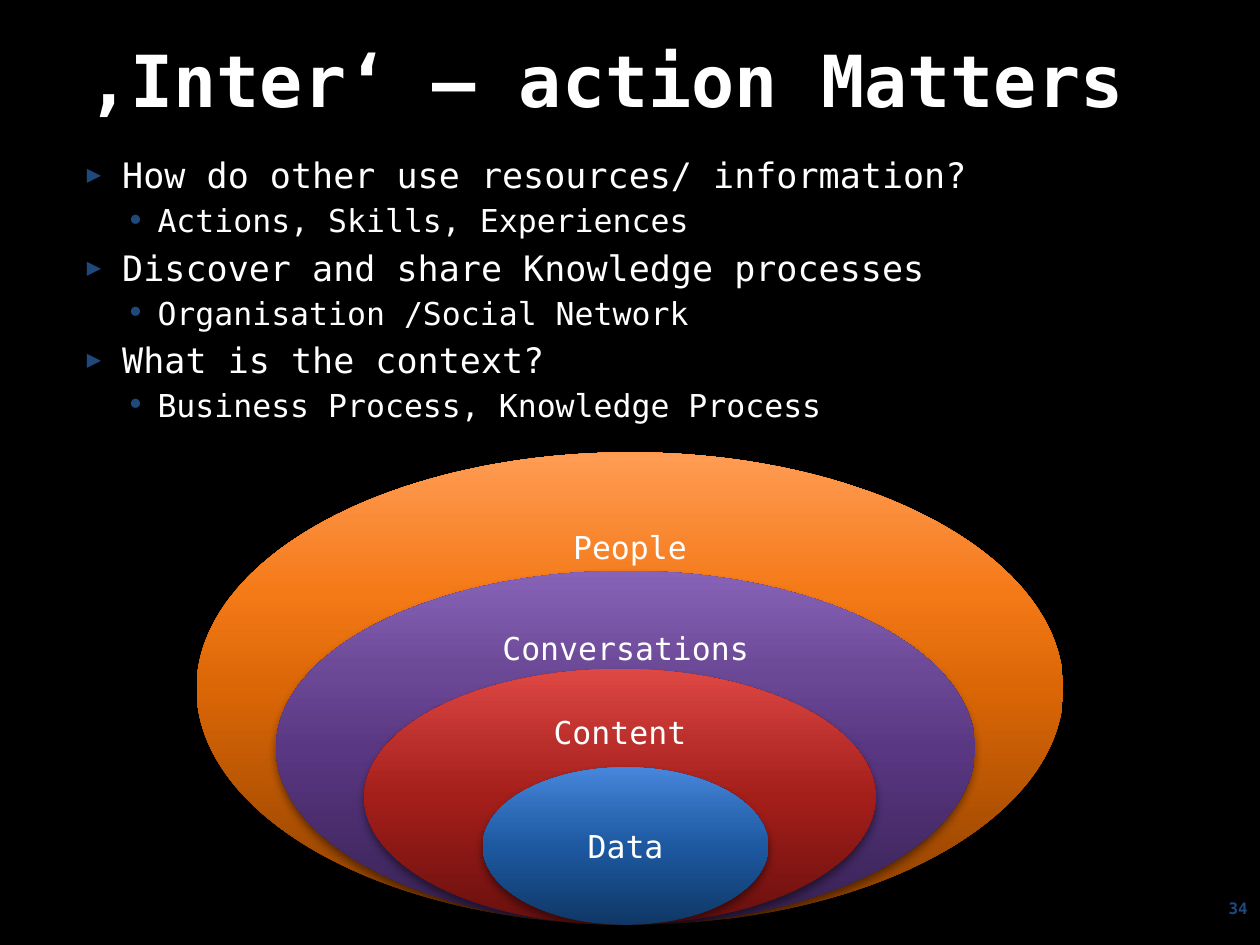
from lxml.etree import SubElement
from pptx import Presentation
from pptx.dml.color import RGBColor
from pptx.enum.shapes import MSO_SHAPE
from pptx.enum.text import MSO_ANCHOR, PP_ALIGN
from pptx.oxml import parse_xml
from pptx.oxml.ns import nsdecls, qn
from pptx.util import Inches, Pt

FONT = "DejaVu Sans Mono"
BLACK = RGBColor(0x00, 0x00, 0x00)
WHITE = RGBColor(0xFF, 0xFF, 0xFF)
NAVY = RGBColor(0x1F, 0x49, 0x7D)

TITLE = "‚Inter‘ – action Matters"
TITLE_BOX = (0.31, 0, 9, 1.25)
POINTS = [
    ("How do other use resources/ information?", "Actions, Skills, Experiences"),
    ("Discover and share Knowledge processes", "Organisation /Social Network"),
    ("What is the context?", "Business Process, Knowledge Process"),
]
POINTS_BOX = (0.47, 1.17, 9.28, 2.5)
LEVELS = [
    dict(size=20, before=4, left=0.4, hanging=0.28, bullet="▶", percent=68),
    dict(size=18, before=3.2, left=0.68, hanging=0.25, bullet="•", percent=100),
]
PAGE_NUMBER = "34"
PAGE_NUMBER_BOX = (9.46, 7.01, 0.54, 0.4)

# Nested ellipses share one bottom edge: label, left, width, height, anchor, colours
LAYERS_BOTTOM = 7.34
STOPS = (0, 50, 70, 100)
TOP, MIDDLE = MSO_ANCHOR.TOP, MSO_ANCHOR.MIDDLE
LAYERS = [
    ("People", 1.56, 6.88, 3.75, TOP,
     (RGBColor(0x8B, 0x3F, 0x00), RGBColor(0xDA, 0x66, 0x06),
      RGBColor(0xF4, 0x79, 0x17), RGBColor(0xFF, 0x9C, 0x54))),
    ("Conversations", 2.19, 5.55, 2.81, TOP,
     (RGBColor(0x37, 0x21, 0x52), RGBColor(0x59, 0x37, 0x82),
      RGBColor(0x6A, 0x48, 0x95), RGBColor(0x87, 0x63, 0xB7))),
    ("Content", 2.89, 4.06, 2.03, TOP,
     (RGBColor(0x68, 0x10, 0x0E), RGBColor(0xA4, 0x1E, 0x1A),
      RGBColor(0xB9, 0x2E, 0x2A), RGBColor(0xDF, 0x48, 0x45))),
    ("Data", 3.83, 2.27, 1.25, MIDDLE,
     (RGBColor(0x0F, 0x37, 0x66), RGBColor(0x1D, 0x59, 0xA1),
      RGBColor(0x2D, 0x6A, 0xB6), RGBColor(0x47, 0x86, 0xDB))),
]


def place(sp, box):
    sp.left, sp.top, sp.width, sp.height = (Inches(v) for v in box)


def write(p, text, size, color=WHITE, bold=False, align=None):
    p.alignment = align
    r = p.add_run()
    r.text = text
    r.font.color.rgb = color
    for name, value in dict(name=FONT, size=Pt(size), bold=bold).items():
        setattr(r.font, name, value)


def add_bullet(p, level):
    pPr = p._p.get_or_add_pPr()
    pPr.set("marL", str(Inches(level["left"])))
    pPr.set("indent", str(-Inches(level["hanging"])))
    SubElement(SubElement(pPr, qn("a:buClr")), qn("a:srgbClr"), val=str(NAVY))
    SubElement(pPr, qn("a:buSzPct"), val=str(level["percent"] * 1000))
    SubElement(pPr, qn("a:buFont"), typeface=FONT)
    SubElement(pPr, qn("a:buChar"), char=level["bullet"])


def shade(sp, colors):
    """Give the shape a bottom-to-top gradient and a soft shadow below it."""
    stops = "".join(
        f'<a:gs pos="{pos * 1000}"><a:srgbClr val="{color}"/></a:gs>'
        for pos, color in zip(STOPS, colors))
    gradient = parse_xml(
        f'<a:gradFill {nsdecls("a")} rotWithShape="1"><a:gsLst>{stops}</a:gsLst>'
        '<a:lin ang="16200000" scaled="0"/></a:gradFill>')
    shadow = parse_xml(
        f'<a:effectLst {nsdecls("a")}><a:outerShdw blurRad="{Pt(5)}" dist="{Pt(3)}" '
        f'dir="5400000" rotWithShape="0"><a:srgbClr val="{BLACK}">'
        '<a:alpha val="45000"/></a:srgbClr></a:outerShdw></a:effectLst>')
    sp.line.fill.background()
    spPr = sp._element.spPr
    spPr.find(qn("a:prstGeom")).addnext(gradient)
    spPr.find(qn("a:ln")).addnext(shadow)


def add_points(body):
    place(body, POINTS_BOX)
    tf = body.text_frame
    lines = [(i, text) for point in POINTS for i, text in enumerate(point)]
    for n, (i, text) in enumerate(lines):
        p = tf.add_paragraph() if n else tf.paragraphs[0]
        level = LEVELS[i]
        p.level = i
        p.space_before = Pt(level["before"] if n else 0)
        add_bullet(p, level)
        write(p, text, level["size"])


def add_layer(s, label, left, width, height, anchor, colors):
    box = (left, LAYERS_BOTTOM - height, width, height)
    sp = s.shapes.add_shape(MSO_SHAPE.OVAL, *(Inches(v) for v in box))
    shade(sp, colors)
    sp.text_frame.vertical_anchor = anchor
    write(sp.text_frame.paragraphs[0], label, 18, align=PP_ALIGN.CENTER)


def main():
    prs = Presentation()
    prs.slide_width, prs.slide_height = Inches(10), Inches(7.5)
    s = prs.slides.add_slide(prs.slide_layouts[1])
    s.background.fill.solid()
    s.background.fill.fore_color.rgb = BLACK

    title, body = s.placeholders
    place(title, TITLE_BOX)
    write(title.text_frame.paragraphs[0], TITLE, 41, bold=True, align=PP_ALIGN.CENTER)
    add_points(body)

    for layer in LAYERS:
        add_layer(s, *layer)

    number = s.shapes.add_textbox(*(Inches(v) for v in PAGE_NUMBER_BOX))
    tf = number.text_frame
    tf.word_wrap = True
    tf.vertical_anchor = MIDDLE
    write(tf.paragraphs[0], PAGE_NUMBER, 9, NAVY, bold=True, align=PP_ALIGN.RIGHT)

    prs.save("out.pptx")


if __name__ == "__main__":
    main()
